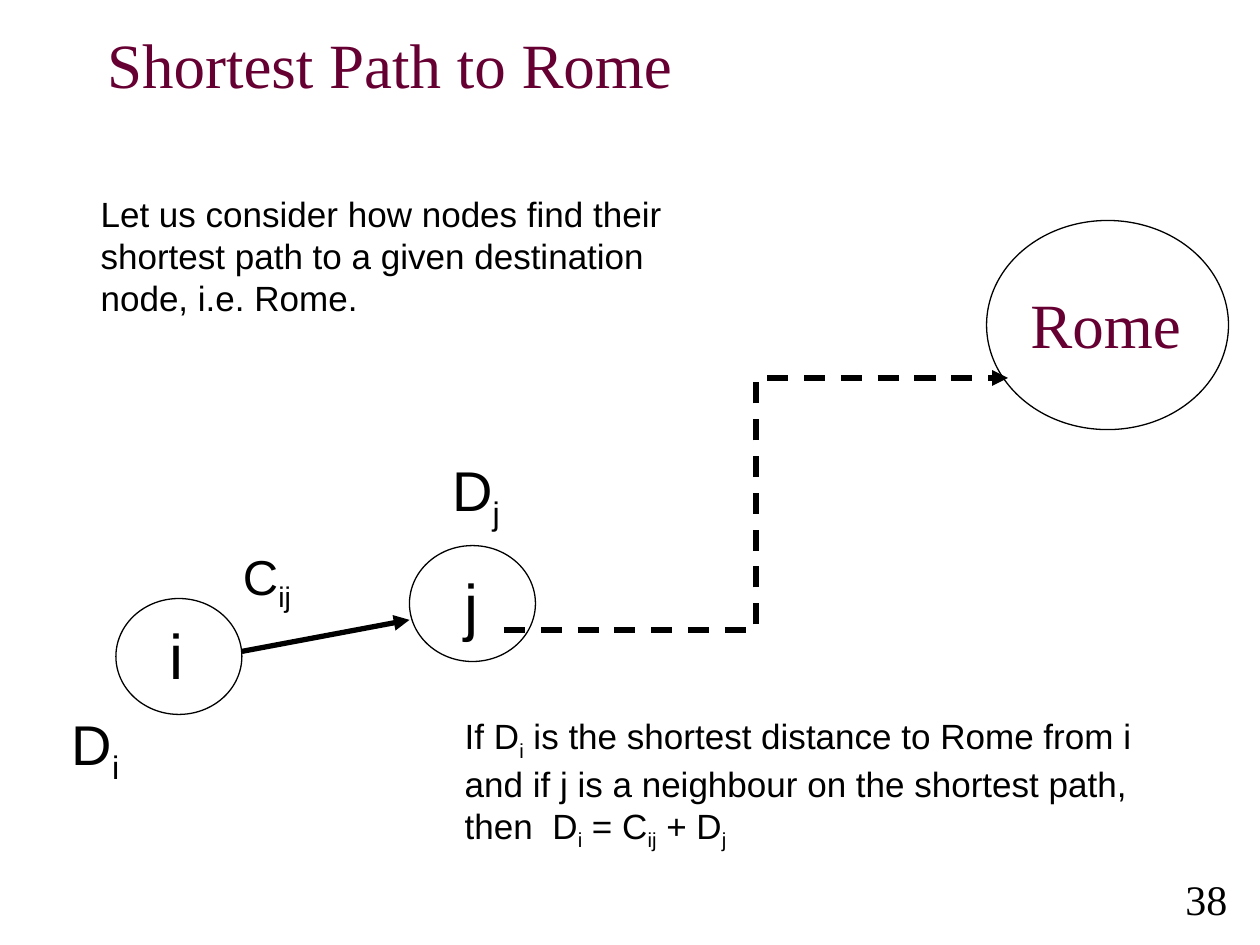
from lxml import etree
from pptx import Presentation
from pptx.dml.color import RGBColor
from pptx.enum import dml, shapes, text
from pptx.oxml.ns import qn
from pptx.util import Inches, Pt

BLACK, WINE, WHITE = "000000", "660033", "FFFFFF"
SANS, SERIF = "Arial", "Times New Roman"
LEFT, RIGHT = text.PP_ALIGN.LEFT, text.PP_ALIGN.RIGHT

TITLE = "Shortest Path to Rome"
NODES = [  # left, top, width, height, fill
    (0.92, 4.75, 1, 0.92, WHITE),
    (3.25, 4.33, 1, 0.92, WHITE),
    (7.83, 1.75, 1.92, 1.66, None),
]
# left, top, width, height, lines (subscripts between bars), size, font, colour, align
TEXTS = [
    (1.25, 4.84, 0.52, 0.7, ["i"], 36, SANS, BLACK, LEFT),
    (3.59, 4.45, 0.52, 0.7, ["j"], 36, SANS, BLACK, LEFT),
    (8.08, 2.22, 1.53, 0.71, ["Rome"], 36, SERIF, WINE, LEFT),
    (1.83, 4.29, 0.61, 0.57, ["C|ij|"], 28, SANS, BLACK, LEFT),
    (3.49, 3.57, 0.74, 0.63, ["D|j|"], 32, SANS, BLACK, LEFT),
    (0.47, 5.58, 0.81, 0.63, ["D|i|"], 32, SANS, BLACK, LEFT),
    (3.59, 5.62, 6, 1.11, [
        "If D|i| is the shortest distance to Rome from i",
        "and if j is a neighbour on the shortest path,",
        "then  D|i| = C|ij| + D|j|",
    ], 20, SANS, BLACK, LEFT),
    (0.7, 1.48, 4.89, 1.11, [
        "Let us consider how nodes find their shortest path "
        "to a given destination node, i.e. Rome.",
    ], 20, SANS, BLACK, LEFT),
    (8.59, 6.88, 1.25, 0.51, ["38"], 24, SERIF, BLACK, RIGHT),
]
LINK = (1.92, 5.17, 3.25, 4.92)
START = (4.25, 4.75)
ROUTE = [  # two control points and an end point for each curve
    (4.59, 4.8), (4.93, 4.85), (5.17, 4.83),
    (5.4, 4.82), (5.53, 4.81), (5.67, 4.67),
    (5.81, 4.53), (5.88, 4.28), (6, 4),
    (6.12, 3.72), (6.11, 3.24), (6.42, 3),
    (6.72, 2.76), (7.28, 2.67), (7.83, 2.58),
]


def color(code):
    return RGBColor.from_string(code)


def write(frame, lines, size, face, code, align):
    for n, line in enumerate(lines):
        para = frame.paragraphs[0] if n == 0 else frame.add_paragraph()
        para.alignment = align
        for k, part in enumerate(line.split("|")):
            if not part:
                continue
            run = para.add_run()
            run.text = part
            run.font.size, run.font.name = Pt(size), face
            run.font.color.rgb = color(code)
            if k % 2:
                run._r.get_or_add_rPr().set("baseline", "-25000")


def stroke(shape, width):
    shape.line.color.rgb = color(BLACK)
    shape.line.width = Pt(width)


def point(shape):
    """Put an arrowhead at the end of the line."""
    etree.SubElement(shape.line._get_or_add_ln(), qn("a:tailEnd"), type="triangle")


def bend(shape):
    """Turn each three straight segments into one Bezier curve."""
    steps = list(shape._element.iter(qn("a:lnTo")))
    for n in range(0, len(steps), 3):
        curve = etree.Element(qn("a:cubicBezTo"))
        steps[n].addprevious(curve)
        for step in steps[n:n + 3]:
            curve.append(step[0])
            step.getparent().remove(step)


def main():
    prs = Presentation()
    prs.slide_width, prs.slide_height = Inches(10), Inches(7.5)
    slide = prs.slides.add_slide(prs.slide_layouts[5])
    parts = slide.shapes

    title = parts.title
    title.left, title.top = Inches(0.75), Inches(0)
    title.width, title.height = Inches(8.5), Inches(1)
    title.text_frame.vertical_anchor = text.MSO_ANCHOR.MIDDLE
    write(title.text_frame, [TITLE], 36, SERIF, WINE, LEFT)

    for *box, fill in NODES:
        node = parts.add_shape(shapes.MSO_SHAPE.OVAL, *map(Inches, box))
        node.shadow.inherit = False
        stroke(node, 0.75)
        if fill:
            node.fill.solid()
            node.fill.fore_color.rgb = color(fill)
        else:
            node.fill.background()

    link = parts.add_connector(shapes.MSO_CONNECTOR.STRAIGHT, *map(Inches, LINK))
    stroke(link, 3)
    point(link)
    etree.SubElement(link._element.spPr, qn("a:effectLst"))

    pen = parts.build_freeform(*START, scale=Inches(1))
    pen.add_line_segments(ROUTE, close=False)
    route = pen.convert_to_shape()
    bend(route)
    route.shadow.inherit = False
    route.fill.background()
    stroke(route, 3)
    route.line.dash_style = dml.MSO_LINE.DASH
    point(route)

    for *box, lines, size, face, code, align in TEXTS:
        frame = parts.add_textbox(*map(Inches, box)).text_frame
        frame.word_wrap = True
        write(frame, lines, size, face, code, align)

    prs.save("out.pptx")


if __name__ == "__main__":
    main()
